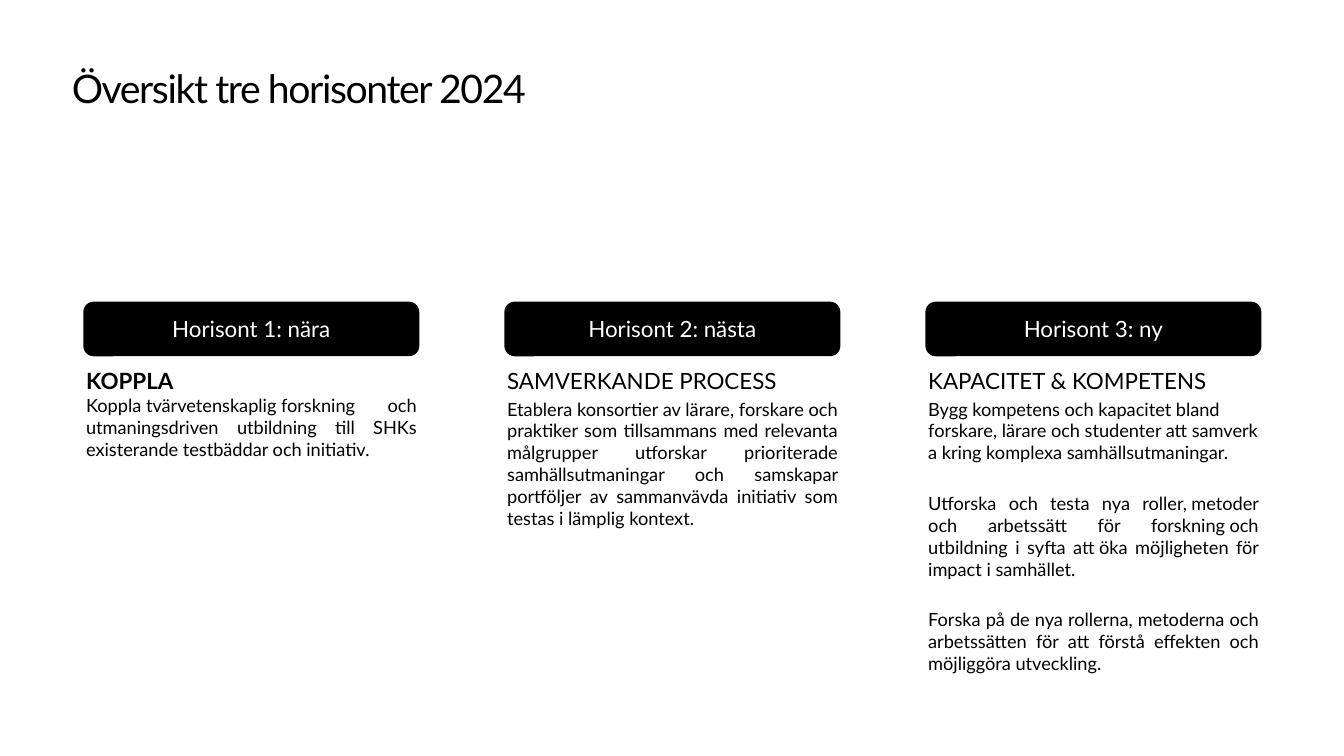
from dataclasses import dataclass

from pptx import Presentation
from pptx.dml.color import RGBColor
from pptx.enum import shapes, text
from pptx.util import Pt


@dataclass(frozen=True)
class Theme:
    font: str = "Lato"
    ink: RGBColor = RGBColor(0, 0, 0)
    paper: RGBColor = RGBColor(255, 255, 255)
    title: float = 28
    heading: float = 16
    body: float = 13


THEME = Theme()
LEFT, RIGHT = text.PP_ALIGN.LEFT, text.PP_ALIGN.RIGHT
CENTER, JUSTIFY = text.PP_ALIGN.CENTER, text.PP_ALIGN.JUSTIFY
TOP, MIDDLE = text.MSO_ANCHOR.TOP, text.MSO_ANCHOR.MIDDLE

COLUMN_LEFT, COLUMN_TOP, COLUMN_PITCH = 59.5, 215.5, 300.75
COLUMN_WIDTH, COLUMN_HEIGHT = 240, 272.5
LABEL_HEIGHT, LABEL_GAP = 39, 6
HEADING_GAP, SECTION_GAP = 2.5, 20.6

# A tilde in the wording stands for a no-break space.
HORIZONS = [
    dict(label="Horisont 1: nära", heading="KOPPLA", bold=True, gap=0, body=[
        "Koppla~tvärvetenskaplig~forskning och utmaningsdriven utbildning till "
        "SHKs existerande testbäddar och~initiativ."]),
    dict(label="Horisont 2: nästa", heading="SAMVERKANDE PROCESS", body=[
        "Etablera konsortier av lärare, forskare och praktiker som tillsammans "
        "med relevanta målgrupper utforskar prioriterade samhällsutmaningar och "
        "samskapar portföljer av sammanvävda initiativ som testas i lämplig "
        "kontext."]),
    dict(label="Horisont 3: ny", heading="KAPACITET & KOMPETENS", body=[
        "Bygg~kompetens~och~kapacitet~bland "
        "forskare,~lärare~och~studenter~att~samverka~kring~komplexa~"
        "samhällsutmaningar.",
        "Utforska och testa nya roller,~metoder och arbetssätt för forskning~och "
        "utbildning i syfta att~öka möjligheten för impact i samhället.",
        "Forska på de nya rollerna, metoderna och arbetssätten för att förstå "
        "effekten och möjliggöra utveckling."]),
]


def prepare_frame(s, inset, anchor=TOP):
    tf = s.text_frame
    tf.word_wrap = True
    tf.vertical_anchor = anchor
    tf.margin_left = tf.margin_top = tf.margin_right = tf.margin_bottom = Pt(inset)
    return tf


def add_text(tf, words, size, color=THEME.ink, bold=False, align=LEFT,
             before=0, line=None, tracking=None):
    """Add a paragraph, using the frame's first one while it is empty."""
    first = tf.paragraphs[0]
    p = tf.add_paragraph() if first.runs else first
    p.alignment = align
    p.space_before = Pt(before)
    if line:
        p.line_spacing = line
    r = p.add_run()
    r.text = words.replace("~", chr(160))
    r.font.name = THEME.font
    r.font.size = Pt(size)
    r.font.bold = bold
    r.font.color.rgb = color
    if tracking:
        r.font._element.set("spc", str(round(tracking * 100)))


def add_title(slide, x, y, w, h):
    s = slide.shapes.add_textbox(Pt(x), Pt(y), Pt(w), Pt(h))
    add_text(prepare_frame(s, 4.5), "Översikt tre horisonter 2024", THEME.title,
             line=0.9, tracking=-1)


def add_label(slide, words, x, y, w, h):
    s = slide.shapes.add_shape(shapes.MSO_SHAPE.ROUNDED_RECTANGLE,
                               Pt(x), Pt(y), Pt(w), Pt(h))
    s.adjustments[0] = 0.19
    s.shadow.inherit = False
    s.fill.solid()
    s.fill.fore_color.rgb = THEME.ink
    s.line.fill.background()
    add_text(prepare_frame(s, 2, MIDDLE), words, THEME.heading,
             color=THEME.paper, align=CENTER)


def add_horizon(slide, x, y, w, h, label, heading, body, bold=False,
                gap=HEADING_GAP):
    add_label(slide, label, x, y, w, LABEL_HEIGHT)
    offset = LABEL_HEIGHT + LABEL_GAP
    s = slide.shapes.add_textbox(Pt(x), Pt(y + offset), Pt(w), Pt(h - offset))
    tf = prepare_frame(s, 2)
    add_text(tf, heading, THEME.heading, bold=bold)
    for i, words in enumerate(body):
        add_text(tf, words, THEME.body, align=JUSTIFY,
                 before=SECTION_GAP if i else gap)


def main():
    prs = Presentation()
    prs.slide_width, prs.slide_height = Pt(960), Pt(540)
    slide = prs.slides.add_slide(prs.slide_layouts[6])
    add_title(slide, 46.8, 45.4, 721.4, 36)
    for i, horizon in enumerate(HORIZONS):
        add_horizon(slide, COLUMN_LEFT + i * COLUMN_PITCH, COLUMN_TOP,
                    COLUMN_WIDTH, COLUMN_HEIGHT, **horizon)
    prs.save("out.pptx")


if __name__ == "__main__":
    main()
